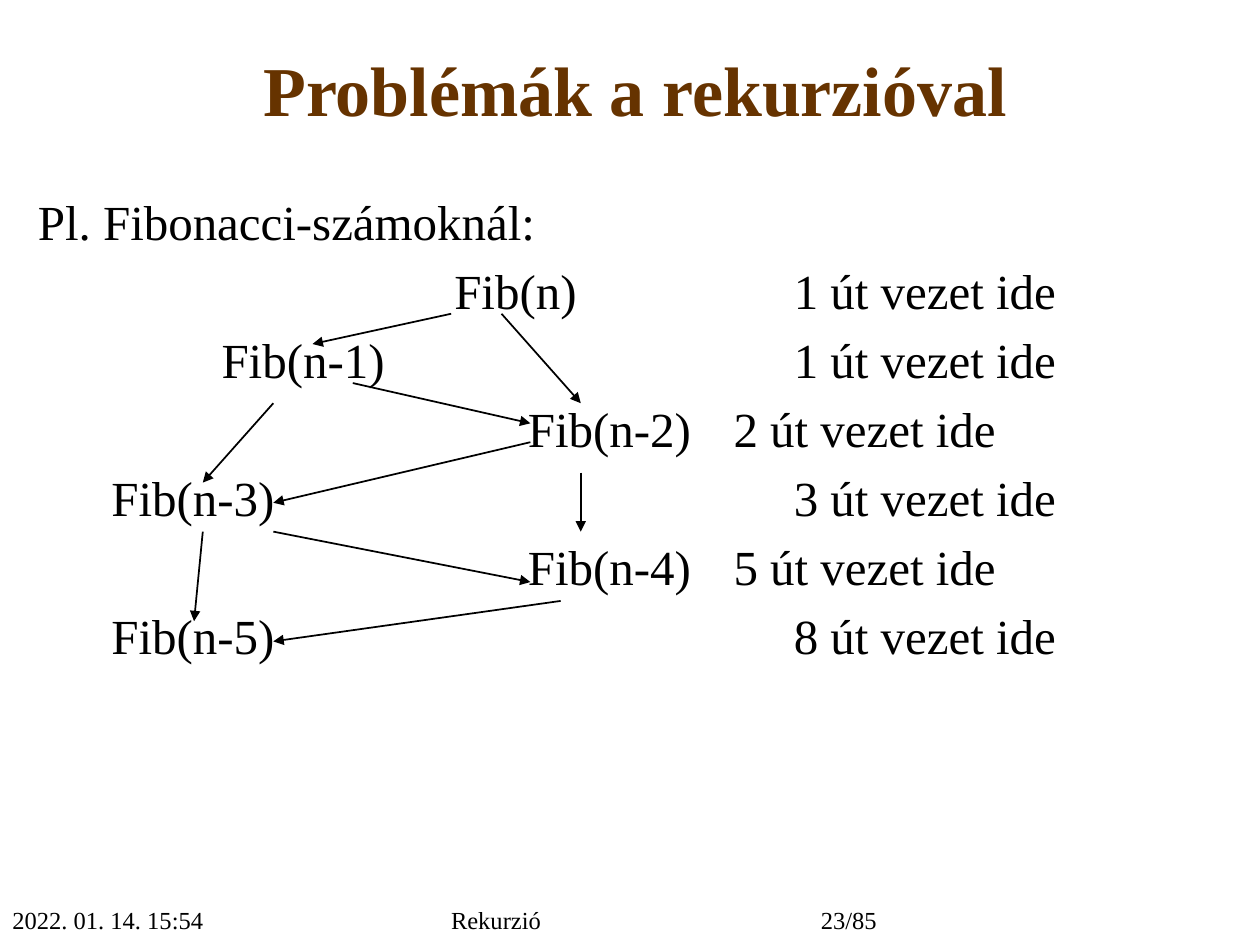
from lxml.etree import SubElement
from pptx import Presentation
from pptx.dml.color import RGBColor
from pptx.enum.shapes import MSO_CONNECTOR
from pptx.enum.text import MSO_ANCHOR, MSO_AUTO_SIZE, PP_ALIGN
from pptx.oxml.ns import qn
from pptx.util import Pt

BROWN = RGBColor(0x66, 0x33, 0x00)
BLACK = RGBColor(0, 0, 0)
FONT = "Times New Roman"

# Distances of the text columns from the left edge of the body text
COUNT_LEFT = 432
CALLS = [
    ("Fib(n)", 238, 1),
    ("Fib(n-1)", 105, 1),
    ("Fib(n-2)", 280, 2),
    ("Fib(n-3)", 42, 3),
    ("Fib(n-4)", 280, 5),
    ("Fib(n-5)", 42, 8),
]

# Start and end of each call arrow: x, y, x, y
ARROWS = [
    (257.8, 179.3, 178.6, 196.6),
    (286.6, 179.3, 331.9, 230.4),
    (156.2, 230.4, 115.9, 275.8),
    (201.6, 218.9, 303.1, 241.9),
    (303.1, 252.7, 156.2, 287.3),
    (331.9, 270, 331.9, 303.8),
    (115.9, 303.8, 110.9, 355),
    (156.2, 303.8, 303.1, 332.6),
    (320.4, 343.4, 156.2, 366.5),
]


def place(shape, left, top, width, height):
    shape.left, shape.top = Pt(left), Pt(top)
    shape.width, shape.height = Pt(width), Pt(height)


def style(paragraph, size, color=BLACK, bold=False):
    font = paragraph.font
    font.name, font.size, font.bold = FONT, Pt(size), bold
    font.color.rgb = color


def set_indent(paragraph, first_line=0, hanging=0):
    """Remove the bullet; a tab in the first line leads to the hanging margin."""
    properties = paragraph._p.get_or_add_pPr()
    properties.set("marL", str(Pt(hanging)))
    properties.set("indent", str(Pt(first_line - hanging)))
    SubElement(properties, qn("a:buNone"))


def fill_title(title):
    place(title, 133.2, 6.5, 459.5, 88)
    frame = title.text_frame
    frame.text = "Problémák a rekurzióval"
    frame.auto_size = MSO_AUTO_SIZE.NONE
    frame.vertical_anchor = MSO_ANCHOR.MIDDLE
    paragraph = frame.paragraphs[0]
    paragraph.alignment = PP_ALIGN.CENTER
    style(paragraph, 40, BROWN, bold=True)


def fill_body(body):
    place(body, 14.4, 105.6, 692, 391)
    frame = body.text_frame
    frame.auto_size = MSO_AUTO_SIZE.NONE
    heading = frame.paragraphs[0]
    heading.text = "Pl. Fibonacci-számoknál:"
    set_indent(heading)
    for call, left, count in CALLS:
        paragraph = frame.add_paragraph()
        paragraph.text = f"{call}\t{count} út vezet ide"
        set_indent(paragraph, left, COUNT_LEFT)
    for index, paragraph in enumerate(frame.paragraphs):
        paragraph.space_before = Pt(2.8 if index else 0)
        paragraph.space_after = Pt(3)
        style(paragraph, 28)


def add_arrow(slide, start_x, start_y, end_x, end_y):
    arrow = slide.shapes.add_connector(
        MSO_CONNECTOR.STRAIGHT, Pt(start_x), Pt(start_y), Pt(end_x), Pt(end_y))
    arrow.line.color.rgb = BLACK
    arrow.line.width = Pt(1)
    SubElement(arrow.line._get_or_add_ln(), qn("a:tailEnd"), type="triangle")
    SubElement(arrow._element.spPr, qn("a:effectLst"))


def add_footer(slide, text, left, width, alignment=PP_ALIGN.LEFT):
    box = slide.shapes.add_textbox(Pt(left), Pt(513.8), Pt(width), Pt(26))
    frame = box.text_frame
    frame.word_wrap = True
    frame.text = text
    paragraph = frame.paragraphs[0]
    paragraph.alignment = alignment
    style(paragraph, 14)


def main():
    presentation = Presentation()
    presentation.slide_width, presentation.slide_height = Pt(720), Pt(540)
    slide = presentation.slides.add_slide(presentation.slide_layouts[1])
    fill_title(slide.shapes.title)
    fill_body(slide.placeholders[1])
    for arrow in ARROWS:
        add_arrow(slide, *arrow)
    add_footer(slide, "2022. 01. 14. 15:54", 0, 127.5)
    add_footer(slide, "Rekurzió", 116, 335, PP_ALIGN.CENTER)
    add_footer(slide, "23/85", 462, 68.5)
    presentation.save("out.pptx")


if __name__ == "__main__":
    main()
